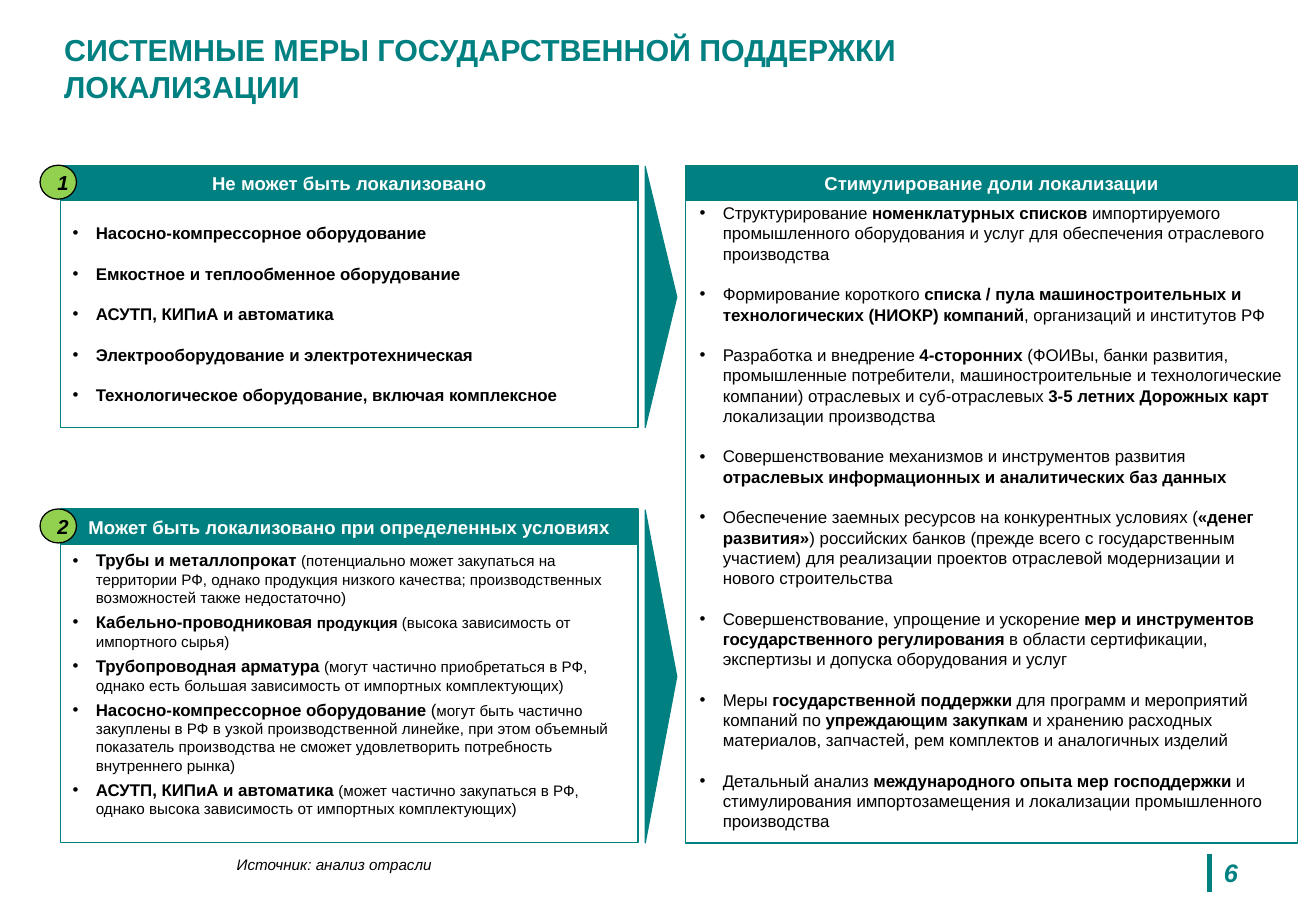
from lxml import etree
from pptx import Presentation
from pptx.dml.color import RGBColor
from pptx.enum.shapes import MSO_CONNECTOR, MSO_SHAPE
from pptx.enum.text import MSO_ANCHOR, PP_ALIGN
from pptx.oxml.ns import qn
from pptx.util import Inches, Pt

RECT, PLATE = MSO_SHAPE.RECTANGLE, MSO_SHAPE.PENTAGON
DOT, LINE = MSO_SHAPE.FLOWCHART_CONNECTOR, MSO_CONNECTOR.STRAIGHT
TOP, MID = MSO_ANCHOR.TOP, MSO_ANCHOR.MIDDLE
LEFT, CENTER = PP_ALIGN.LEFT, PP_ALIGN.CENTER
TEAL, LIME, BLACK, WHITE = "008080", "92D050", "000000", "FFFFFF"
SMALL = 9

# Grid in inches: column as (left, width), row as (top, bottom)
COL_A, COL_B, COL_C = (0.5, 4.75), (5.31, 0.26), (5.64, 5.04)
ROW_A, ROW_B = (1.36, 3.52), (4.19, 6.94)
HEAD = 0.29
INDENT = 0.19

# In lists, * switches bold and ~ switches the small size
FIXED = [
    "*Насосно-компрессорное оборудование",
    "*Емкостное и теплообменное оборудование",
    "*АСУТП, КИПиА и автоматика",
    "*Электрооборудование и электротехническая",
    "*Технологическое оборудование, включая комплексное",
]
PARTLY = [
    "*Трубы и металлопрокат *~(потенциально может закупаться на территории РФ, "
    "однако продукция низкого качества; производственных возможностей также "
    "недостаточно)",
    "*Кабельно-проводниковая ~продукция *(высока зависимость от импортного сырья)",
    "*Трубопроводная арматура *~(могут частично приобретаться в РФ, однако есть "
    "большая зависимость от импортных комплектующих)",
    "*Насосно-компрессорное оборудование *(~могут быть частично закуплены в РФ в "
    "узкой производственной линейке, при этом объемный показатель производства "
    "не сможет удовлетворить потребность внутреннего рынка)",
    "*АСУТП, КИПиА и автоматика *~(может частично закупаться в РФ, однако высока "
    "зависимость от импортных комплектующих)",
]
STEPS = [
    "Структурирование *номенклатурных списков* импортируемого промышленного "
    "оборудования и услуг для обеспечения отраслевого производства",
    "Формирование короткого *списка / пула машиностроительных и технологических "
    "(НИОКР) компаний*, организаций и институтов РФ",
    "Разработка и внедрение *4-сторонних *(ФОИВы, банки развития, промышленные "
    "потребители, машиностроительные и технологические компании) отраслевых и "
    "суб-отраслевых *3-5 летних Дорожных карт* локализации производства",
    "Совершенствование механизмов и инструментов развития *отраслевых "
    "информационных и аналитических баз данных",
    "Обеспечение заемных ресурсов на конкурентных условиях (*«денег развития»*) "
    "российских банков (прежде всего с государственным участием) для реализации "
    "проектов отраслевой модернизации и нового строительства",
    "Совершенствование, упрощение и ускорение *мер и инструментов "
    "государственного регулирования *в области сертификации, экспертизы и "
    "допуска оборудования и услуг",
    "Меры *государственной поддержки* для программ и мероприятий компаний по "
    "*упреждающим закупкам *и хранению расходных материалов, запчастей, рем "
    "комплектов и аналогичных изделий",
    "Детальный анализ *международного опыта мер господдержки *и стимулирования "
    "импортозамещения и локализации промышленного производства",
]


def rgb(code):
    return RGBColor.from_string(code)


def split(text):
    """Yield (text, bold, small) for each run of marked text."""
    bold = False
    small = False
    for i, part in enumerate(text.split("*")):
        bold = i % 2 == 1
        for j, bit in enumerate(part.split("~")):
            if j:
                small = not small
            if bit:
                yield bit, bold, small


def bullet(para):
    props = para._p.get_or_add_pPr()
    props.set("marL", str(Inches(INDENT)))
    props.set("indent", str(-Inches(INDENT)))
    etree.SubElement(props, qn("a:buFont")).set("typeface", "Arial")
    etree.SubElement(props, qn("a:buChar")).set("char", "•")


def write(shape, items, size=10, color=BLACK, bold=False, italic=False,
          align=LEFT, anchor=TOP, dots=False, before=0, after=0):
    """Put one paragraph per item into the shape."""
    frame = shape.text_frame
    frame.word_wrap = True
    frame.vertical_anchor = anchor
    for i, item in enumerate(items):
        para = frame.add_paragraph() if i else frame.paragraphs[0]
        if dots:
            bullet(para)
        para.alignment = align
        para.space_before = Pt(before if i else 0)
        para.space_after = Pt(after)
        for text, strong, small in split(item):
            run = para.add_run()
            run.text = text
            font = run.font
            font.name = "Arial"
            font.size = Pt(SMALL if small else size)
            font.bold = bold or strong
            font.italic = italic
            font.color.rgb = rgb(color)


def block(slide, kind, x, y, w, h, fill=None, line=TEAL):
    shape = slide.shapes.add_shape(kind, *map(Inches, (x, y, w, h)))
    shape.shadow.inherit = False
    if fill:
        shape.fill.solid()
        shape.fill.fore_color.rgb = rgb(fill)
    else:
        shape.fill.background()
    shape.line.color.rgb = rgb(line)
    shape.line.width = Pt(0.75)
    return shape


def label(slide, x, y, w, h, items, **form):
    write(slide.shapes.add_textbox(*map(Inches, (x, y, w, h))), items, **form)


def head(slide, col, row, text):
    bar = block(slide, RECT, col[0], row[0], col[1], HEAD, fill=TEAL)
    write(bar, [text], size=11, color=WHITE, bold=True, align=CENTER, anchor=MID)


def panel(slide, row, mark, title, items, **form):
    """Headed list with its number and the arrow to the right column."""
    top, end = row
    head(slide, COL_A, row, title)
    body = block(slide, RECT, COL_A[0], top + HEAD, COL_A[1], end - top - HEAD)
    write(body, items, dots=True, **form)
    arrow = block(slide, PLATE, COL_B[0], top + 0.01, COL_B[1], end - top - 0.01,
                  fill=TEAL)
    arrow.adjustments[0] = 1
    badge = block(slide, DOT, COL_A[0] - 0.17, top, 0.3, 0.28, fill=LIME, line=BLACK)
    write(badge, [mark], size=12, bold=True, italic=True, align=CENTER, anchor=MID)


def rule(slide, x, y, end):
    line = slide.shapes.add_connector(LINE, *map(Inches, (x, y, x, end)))
    line.line.color.rgb = rgb(TEAL)
    line.line.width = Pt(3)
    etree.SubElement(line._element.spPr, qn("a:effectLst"))


def main():
    deck = Presentation()
    deck.slide_width, deck.slide_height = Inches(10.83), Inches(7.5)
    slide = deck.slides.add_slide(deck.slide_layouts[6])

    # Title
    label(slide, 0.43, 0.21, 8.76, 0.83,
          ["СИСТЕМНЫЕ МЕРЫ ГОСУДАРСТВЕННОЙ ПОДДЕРЖКИ ЛОКАЛИЗАЦИИ"],
          size=18, color=TEAL, bold=True)

    # Left column
    panel(slide, ROW_A, "1", "Не может быть локализовано", FIXED,
          anchor=MID, before=6, after=6)
    panel(slide, ROW_B, "2", "Может быть локализовано при определенных условиях",
          PARTLY, after=3)

    # Right column
    x, wide = COL_C
    top, end = ROW_A[0], ROW_B[1]
    head(slide, COL_C, ROW_A, "Стимулирование доли локализации")
    label(slide, x + 0.02, 1.62, wide, end - 1.62, STEPS,
          dots=True, before=6, after=6)
    block(slide, RECT, x, top, wide, end - top)

    # Footer
    label(slide, 1.85, 6.99, 1.9, 0.25, ["Источник: анализ отрасли"],
          size=SMALL, italic=True)
    rule(slide, 9.95, 7.03, 7.34)
    label(slide, 9.69, 7.01, 0.88, 0.34, ["6"], size=15, color=TEAL,
          bold=True, italic=True, align=CENTER)

    deck.save("out.pptx")


if __name__ == "__main__":
    main()
